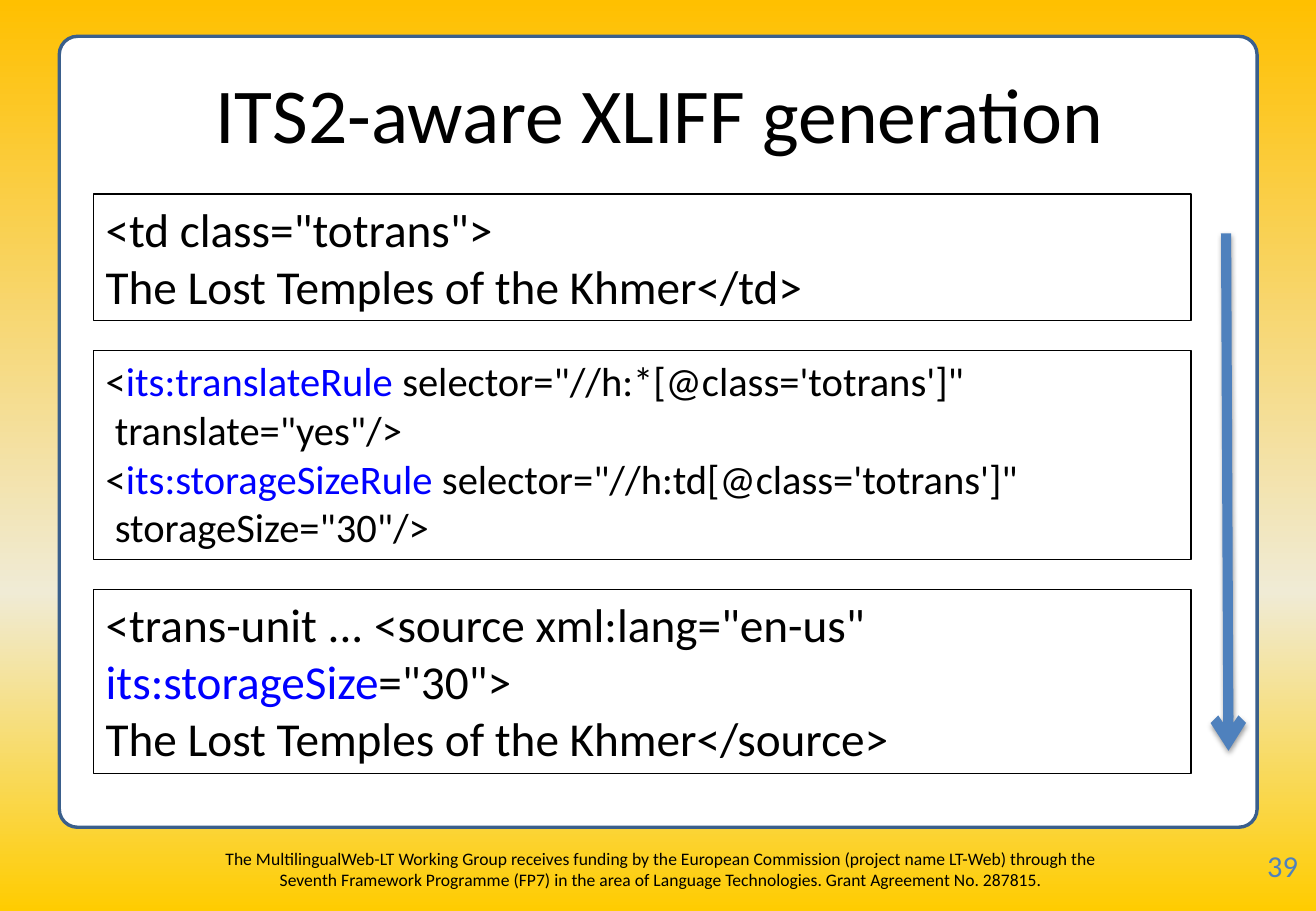
from copy import deepcopy
from dataclasses import dataclass

from lxml.etree import SubElement
from pptx import Presentation
from pptx.dml.color import RGBColor
from pptx.enum.shapes import MSO_CONNECTOR, MSO_SHAPE
from pptx.enum.text import MSO_ANCHOR, MSO_AUTO_SIZE, PP_ALIGN
from pptx.oxml.ns import qn
from pptx.shapes.autoshape import Shape
from pptx.slide import Slide
from pptx.text.text import TextFrame, _Paragraph
from pptx.util import Cm, Pt

BLACK = RGBColor(0x00, 0x00, 0x00)
WHITE = RGBColor(0xFF, 0xFF, 0xFF)
CODE_BLUE = RGBColor(0x00, 0x00, 0xFF)
ACCENT_BLUE = RGBColor(0x4F, 0x81, 0xBD)
PANEL_BLUE = RGBColor(0x3A, 0x5F, 0x8C)
AMBER = RGBColor(0xFF, 0xC0, 0x00)
CREAM = RGBColor(0xF0, 0xEB, 0xD5)
GOLD = RGBColor(0xFF, 0xCC, 0x00)

FONT = "Calibri"
BOX_LEFT, BOX_TOP, BOX_WIDTH, BOX_GAP = 1.96, 4.06, 22.94, 0.63
FOOTER = (
    "The MultilingualWeb-LT Working Group receives funding by the European "
    "Commission (project name LT-Web) through the Seventh Framework Programme "
    "(FP7) in the area of Language Technologies. Grant Agreement No. 287815."
)


@dataclass(frozen=True)
class Segment:
    text: str
    color: RGBColor = BLACK


@dataclass(frozen=True)
class CodeBox:
    height: float
    size: float
    lines: tuple[tuple[Segment, ...], ...]


CODE_BOXES = (
    CodeBox(2.64, 28, (
        (Segment('<td class="totrans">'),),
        (Segment("The Lost Temples of the Khmer</td>"),),
    )),
    CodeBox(4.37, 24, (
        (
            Segment("<"),
            Segment("its:translateRule ", CODE_BLUE),
            Segment("selector=\"//h:*[@class='totrans']\""),
        ),
        (Segment(' translate="yes"/>'),),
        (
            Segment("<"),
            Segment("its:storageSizeRule ", CODE_BLUE),
            Segment("selector=\"//h:td[@class='totrans']\""),
        ),
        (Segment(' storageSize="30"/>'),),
    )),
    CodeBox(3.84, 28, (
        (
            Segment('<trans-unit ... <source xml:lang="en-us" '),
            Segment("its:storageSize", CODE_BLUE),
            Segment('="30">'),
        ),
        (Segment("The Lost Temples of the Khmer</source>"),),
    )),
)


def add_run(paragraph: _Paragraph, segment: Segment, size: float) -> None:
    run = paragraph.add_run()
    run.text = segment.text
    run.font.name = FONT
    run.font.size = Pt(size)
    run.font.color.rgb = segment.color


def paint_background(slide: Slide) -> None:
    fill = slide.background.fill
    fill.gradient()
    fill.gradient_angle = 270
    first_stop = slide.element.find(".//" + qn("a:gs"))
    first_stop.addnext(deepcopy(first_stop))
    colors = ((0, AMBER), (0.65, CREAM), (1, GOLD))
    for stop, (position, color) in zip(fill.gradient_stops, colors):
        stop.position = position
        stop.color.rgb = color


def add_panel(slide: Slide) -> Shape:
    panel = slide.shapes.add_shape(
        MSO_SHAPE.ROUNDED_RECTANGLE, Cm(1.24), Cm(0.76), Cm(25.04), Cm(16.54)
    )
    panel.adjustments[0] = 0.023
    panel.shadow.inherit = False
    panel.fill.solid()
    panel.fill.fore_color.rgb = WHITE
    panel.line.color.rgb = PANEL_BLUE
    panel.line.width = Pt(2)
    return panel


def fill_title(slide: Slide, panel: Shape) -> None:
    title = slide.shapes.title
    panel.element.addnext(title.element)
    title.left, title.top = Cm(1.3), Cm(0.76)
    title.width, title.height = Cm(24.97), Cm(3.18)
    frame = title.text_frame
    frame.auto_size = MSO_AUTO_SIZE.NONE
    frame.vertical_anchor = MSO_ANCHOR.MIDDLE
    paragraph = frame.paragraphs[0]
    paragraph.alignment = PP_ALIGN.CENTER
    add_run(paragraph, Segment("ITS2-aware XLIFF generation"), 46)


def add_label(
    slide: Slide, left: float, top: float, width: float, segment: Segment, size: float
) -> TextFrame:
    label = slide.shapes.add_textbox(Cm(left), Cm(top), Cm(width), Cm(1.02))
    frame = label.text_frame
    frame.word_wrap = True
    add_run(frame.paragraphs[0], segment, size)
    return frame


def add_code_box(slide: Slide, top: float, box: CodeBox) -> None:
    shape = slide.shapes.add_shape(
        MSO_SHAPE.RECTANGLE, Cm(BOX_LEFT), Cm(top), Cm(BOX_WIDTH), Cm(box.height)
    )
    shape.shadow.inherit = False
    shape.fill.background()
    shape.line.color.rgb = BLACK
    shape.line.width = Pt(0.75)
    frame = shape.text_frame
    frame.word_wrap = True
    frame.vertical_anchor = MSO_ANCHOR.TOP
    for index, line in enumerate(box.lines):
        paragraph = frame.add_paragraph() if index else frame.paragraphs[0]
        paragraph.alignment = PP_ALIGN.LEFT
        for segment in line:
            add_run(paragraph, segment, box.size)


def add_flow_arrow(slide: Slide) -> None:
    arrow = slide.shapes.add_connector(
        MSO_CONNECTOR.STRAIGHT, Cm(25.68), Cm(15.7), Cm(25.63), Cm(4.88)
    )
    arrow.line.color.rgb = ACCENT_BLUE
    arrow.line.width = Pt(6)
    SubElement(arrow.line._get_or_add_ln(), qn("a:headEnd"), type="arrow")
    effects = SubElement(arrow.element.spPr, qn("a:effectLst"))
    shadow = SubElement(
        effects, qn("a:outerShdw"),
        blurRad="40000", dist="20000", dir="5400000", rotWithShape="0",
    )
    color = SubElement(shadow, qn("a:srgbClr"), val=str(BLACK))
    SubElement(color, qn("a:alpha"), val="38000")


def main() -> None:
    """Build the slide on ITS2-aware XLIFF generation and save it."""
    presentation = Presentation()
    presentation.slide_width = Cm(27.51)
    presentation.slide_height = Cm(19.05)
    slide = presentation.slides.add_slide(presentation.slide_layouts[5])

    paint_background(slide)
    fill_title(slide, add_panel(slide))

    footer = add_label(slide, 4.11, 17.6, 19.41, Segment(FOOTER), 10.4)
    footer.paragraphs[0].alignment = PP_ALIGN.CENTER

    number = add_label(slide, 26.44, 17.68, 1.07, Segment("39", ACCENT_BLUE), 18)
    number.margin_left = number.margin_right = Cm(0.05)
    number.margin_top = number.margin_bottom = Cm(0.03)

    top = BOX_TOP
    for box in CODE_BOXES:
        add_code_box(slide, top, box)
        top += box.height + BOX_GAP

    add_flow_arrow(slide)
    presentation.save("out.pptx")


if __name__ == "__main__":
    main()
